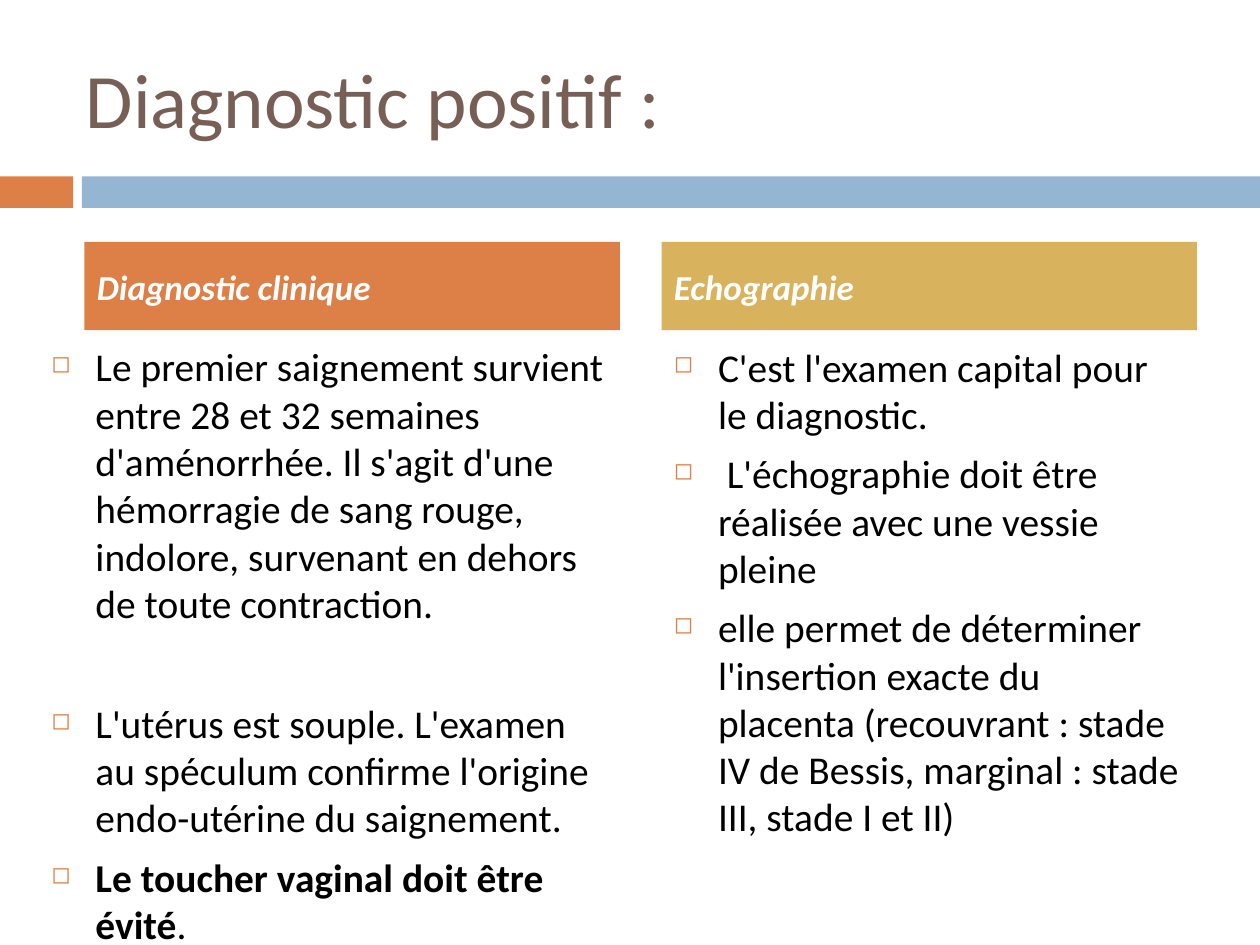
import pptx
import pptx.util
import pptx.dml.color
import pptx.enum.shapes
import pptx.enum.text
from lxml import etree
from pptx.oxml.ns import qn

COLORS = {
    "title": "775F55",
    "orange": "DD8047",
    "blue": "94B6D2",
    "gold": "D8B25C",
    "text": "000000",
    "white": "FFFFFF",
}
COLUMNS, ROWS = 100, 75  # grid cells of a tenth of an inch
ANCHOR = pptx.enum.text.MSO_ANCHOR


class SlideBuilder:
    """Holds the style and the current slide; lengths are grid columns and rows."""

    font_name = "Calibri"
    indent = 0.35
    gap = 7

    def __init__(self, deck):
        self.cell_width = deck.slide_width / COLUMNS
        self.cell_height = deck.slide_height / ROWS
        self.page = deck.slides.add_slide(deck.slide_layouts[5])

    def area(self, left, top, width, height):
        return [
            round(left * self.cell_width),
            round(top * self.cell_height),
            round(width * self.cell_width),
            round(height * self.cell_height),
        ]

    def add_span(self, para, text, color, **formats):
        span = para.add_run()
        span.text = text
        for name, value in {"name": self.font_name, **formats}.items():
            setattr(span.font, name, value)
        span.font.color.rgb = pptx.dml.color.RGBColor.from_string(COLORS[color])

    def prepare(self, box, anchor):
        frame = box.text_frame
        settings = {
            "word_wrap": True,
            "auto_size": pptx.enum.text.MSO_AUTO_SIZE.NONE,
            "vertical_anchor": anchor,
        }
        for name, value in settings.items():
            setattr(frame, name, value)
        frame.paragraphs[0].alignment = pptx.enum.text.PP_ALIGN.LEFT
        return frame

    def title(self, place, text):
        box = self.page.shapes.title
        box.left, box.top, box.width, box.height = self.area(*place)
        frame = self.prepare(box, ANCHOR.MIDDLE)
        self.add_span(frame.paragraphs[0], text, "title", size=pptx.util.Pt(44))

    def bar(self, place, color):
        box = self.page.shapes.add_shape(
            pptx.enum.shapes.MSO_SHAPE.RECTANGLE, *self.area(*place))
        box.shadow.inherit = False
        box.fill.solid()
        box.fill.fore_color.rgb = pptx.dml.color.RGBColor.from_string(COLORS[color])
        box.line.fill.background()
        return box

    def heading(self, place, text, color):
        frame = self.prepare(self.bar(place, color), ANCHOR.MIDDLE)
        self.add_span(frame.paragraphs[0], text, "white",
                      size=pptx.util.Pt(20), bold=True, italic=True)

    def add_bullet(self, para):
        properties = para._p.get_or_add_pPr()
        indent = pptx.util.Inches(self.indent)
        properties.set("marL", str(indent))
        properties.set("indent", str(-indent))
        tint = etree.SubElement(properties, qn("a:buClr"))
        etree.SubElement(tint, qn("a:srgbClr"), val=COLORS["orange"])
        etree.SubElement(properties, qn("a:buSzPct"), val="60000")
        etree.SubElement(properties, qn("a:buChar"), char="◻")

    def bullets(self, place, items):
        """Each item is (extra space before in points, [(text, bold), ...])."""
        box = self.page.shapes.add_textbox(*self.area(*place))
        frame = self.prepare(box, ANCHOR.TOP)
        for number, (extra, spans) in enumerate(items):
            para = frame.add_paragraph() if number else frame.paragraphs[0]
            self.add_bullet(para)
            if number:
                para.space_before = pptx.util.Pt(self.gap + extra)
            for text, bold in spans:
                self.add_span(para, text, "text", size=pptx.util.Pt(22.5), bold=bold)


def main():
    deck = pptx.Presentation()
    deck.slide_width = pptx.util.Inches(10)
    deck.slide_height = pptx.util.Inches(7.5)
    slide = SlideBuilder(deck)

    # Title and the band under it
    slide.bar((0, 14, 5.8, 2.5), "orange")
    slide.bar((6.5, 14, 93.5, 2.5), "blue")
    slide.title((5.8, 3, 89.2, 9.5), "Diagnostic positif :")

    # Bullet lists
    slide.bullets((3.1, 26.7, 46, 43.6), [
        (0, [("Le premier saignement survient entre 28 et 32 semaines "
              "d'aménorrhée. Il s'agit d'une hémorragie de sang rouge, "
              "indolore, survenant en dehors de toute contraction.", False)]),
        (34.5, [("L'utérus est souple. L'examen au spéculum confirme "
                 "l'origine endo-utérine du saignement.", False)]),
        (0, [("Le toucher vaginal doit être évité", True), (".", False)]),
    ])
    slide.bullets((52.5, 26.7, 42.5, 39.2), [
        (0, [("C'est l'examen capital pour le diagnostic.", False)]),
        (0, [(" L'échographie doit être réalisée avec une vessie pleine", False)]),
        (0, [("elle permet de déterminer l'insertion exacte du placenta "
              "(recouvrant : stade IV de Bessis, marginal : stade III, "
              "stade I et II)", False)]),
    ])

    # Column headings
    slide.heading((6.7, 19.2, 42.5, 7), "Diagnostic clinique", "orange")
    slide.heading((52.5, 19.2, 42.5, 7), "Echographie", "gold")

    deck.save("out.pptx")


if __name__ == "__main__":
    main()
